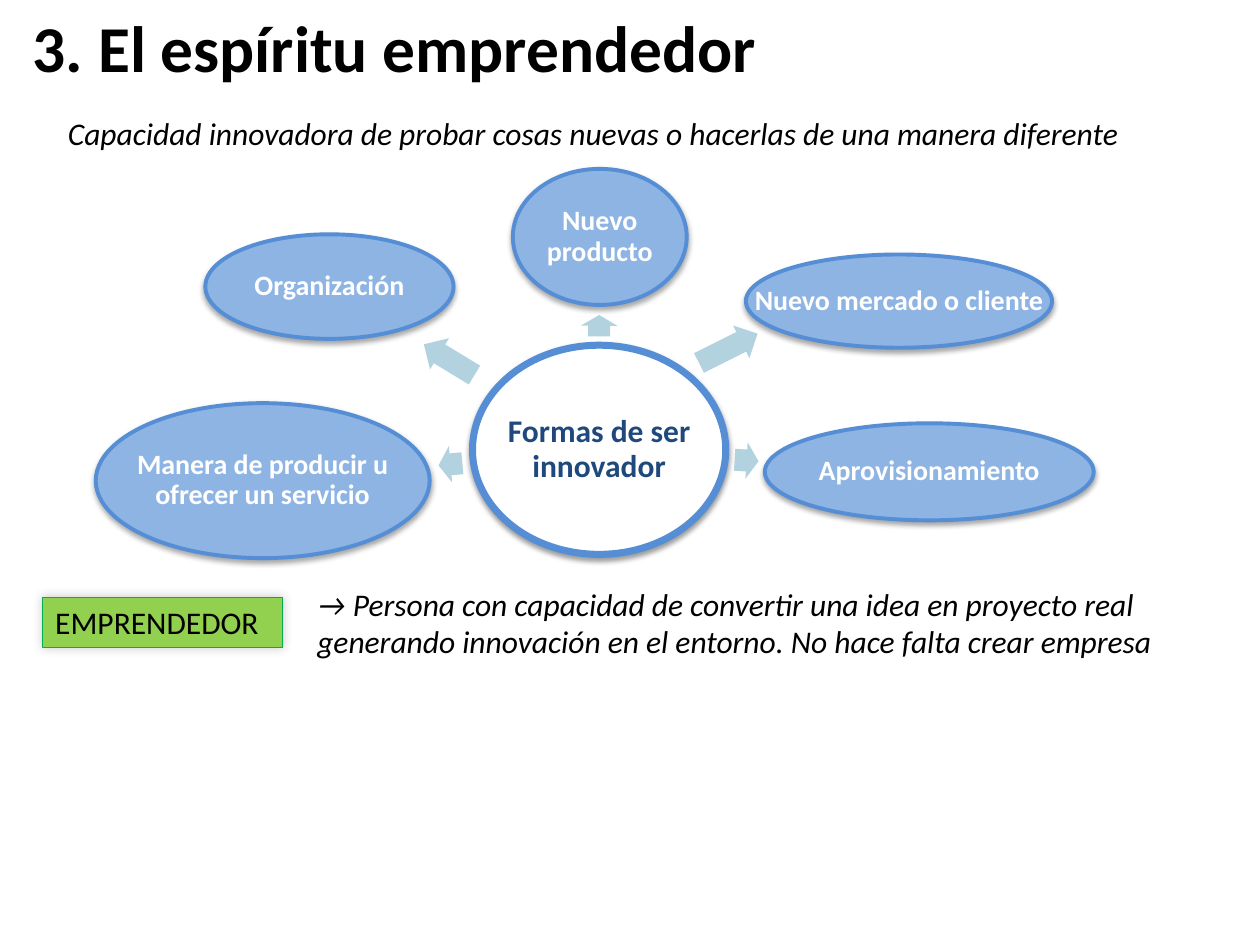
import pptx
import pptx.util
import pptx.dml.color
import pptx.enum.shapes
import pptx.enum.text
import lxml.etree
from dataclasses import dataclass
from pptx.util import Inches


@dataclass(frozen=True)
class Theme:
    font: str = "Calibri"
    text: str = "000000"
    paper: str = "FFFFFF"
    outline: str = "558ED5"
    idea: str = "8EB4E3"
    core_text: str = "1F497D"
    arrow: str = "B2D2DF"
    tag: str = "92D050"
    tag_outline: str = "00B050"
    title_size: float = 37.4
    body_size: float = 18
    idea_size: float = 16


theme = Theme()
rgb = pptx.dml.color.RGBColor.from_string
kinds = pptx.enum.shapes.MSO_SHAPE
align = pptx.enum.text.PP_ALIGN
middle = pptx.enum.text.MSO_ANCHOR.MIDDLE
fit_text = pptx.enum.text.MSO_AUTO_SIZE.SHAPE_TO_FIT_TEXT


def write(holder, words, size, color, bold=False, italic=False, alignment=align.LEFT):
    frame = holder.text_frame
    frame.word_wrap = True
    frame.text = words
    paragraph = frame.paragraphs[0]
    paragraph.alignment = alignment
    paragraph.font.name = theme.font
    paragraph.font.size = pptx.util.Pt(size)
    paragraph.font.color.rgb = rgb(color)
    paragraph.font.bold = bold
    paragraph.font.italic = italic
    return frame


def draw(shapes, kind, box, fill, outline=None, weight=0, shadow=None):
    shape = shapes.add_shape(kind, *map(Inches, box))
    shape.shadow.inherit = False
    shape.fill.solid()
    shape.fill.fore_color.rgb = rgb(fill)
    if outline:
        shape.line.color.rgb = rgb(outline)
        shape.line.width = pptx.util.Pt(weight)
    else:
        shape.line.fill.background()
    if shadow:
        opacity, blur, distance, angle = shadow
        ns = "{http://schemas.openxmlformats.org/drawingml/2006/main}"
        effects = shape.element.spPr.find(ns + "effectLst")
        outer = lxml.etree.SubElement(
            effects, ns + "outerShdw", blurRad=str(pptx.util.Pt(blur)),
            dist=str(pptx.util.Pt(distance)), dir=str(angle * 60000), rotWithShape="0")
        black = lxml.etree.SubElement(outer, ns + "srgbClr", val="000000")
        lxml.etree.SubElement(black, ns + "alpha", val=str(opacity * 1000))
    return shape


deck = pptx.Presentation()
deck.slide_width, deck.slide_height = Inches(10), Inches(7.5)
slide = deck.slides.add_slide(deck.slide_layouts[5])

title = slide.shapes.title
title.left, title.top, title.width, title.height = map(Inches, (0.16, 0.05, 9, 0.63))
write(title, "3. El espíritu emprendedor", theme.title_size, theme.text,
      bold=True).vertical_anchor = middle

definitions = [
    ((0.44, 0.86, 8.91, 0.4),
     "Capacidad innovadora de probar cosas nuevas o hacerlas de una manera diferente"),
    ((2.42, 4.59, 7.25, 0.71),
     "→ Persona con capacidad de convertir una idea en proyecto real generando "
     "innovación en el entorno. No hace falta crear empresa"),
]
for box, words in definitions:
    definition = slide.shapes.add_textbox(*map(Inches, box))
    write(definition, words, theme.body_size, theme.text, italic=True).auto_size = fit_text

entrepreneur = draw(slide.shapes, kinds.RECTANGLE, (0.34, 4.74, 1.9, 0.4),
                    theme.tag, theme.tag_outline, 0.75, (20, 6, 0, 225))
entrepreneur_text = write(entrepreneur, "EMPRENDEDOR", theme.body_size, theme.text)
entrepreneur_text.vertical_anchor = pptx.enum.text.MSO_ANCHOR.TOP
entrepreneur_text.auto_size = fit_text

diagram = slide.shapes.add_group_shape().shapes

arrows = [
    ((4.67, 2.44, 0.17, 0.29), 270.3),
    ((5.52, 2.62, 0.52, 0.29), 333.4),
    ((5.83, 3.51, 0.19, 0.29), 3.6),
    ((3.48, 3.54, 0.19, 0.29), 174.9),
    ((3.33, 2.71, 0.47, 0.29), 211.3),
]
for box, angle in arrows:
    arrow = draw(diagram, kinds.RIGHT_ARROW, box, theme.arrow)
    arrow.rotation = angle
    arrow.adjustments[0] = 0.6
    arrow.adjustments[1] = 0.5

core_style = (theme.paper, 4, (38, 3.1, 1.6, 90), theme.body_size, theme.core_text, 0.03)
idea_style = (theme.idea, 2.25, (35, 3.1, 1.8, 90), theme.idea_size, theme.paper, 0.02)
ideas = [
    ("Formas de ser innovador", (3.75, 2.74, 2.01, 1.66), core_style),
    ("Nuevo producto", (4.07, 1.34, 1.38, 1.08), idea_style),
    ("Nuevo mercado o cliente", (5.92, 2.02, 2.43, 0.74), idea_style),
    ("Aprovisionamiento", (6.07, 3.36, 2.61, 0.77), idea_style),
    ("Manera de producir u ofrecer un servicio", (0.76, 3.2, 2.65, 1.23), idea_style),
    ("Organización", (1.63, 1.86, 1.97, 0.83), idea_style),
]
for words, box, (fill, weight, shadow, size, color, inset) in ideas:
    draw(diagram, kinds.OVAL, box, fill, theme.outline, weight, shadow)
    label = diagram.add_textbox(*map(Inches, box))
    label_text = write(label, words, size, color, bold=True, alignment=align.CENTER)
    label_text.vertical_anchor = middle
    label_text.margin_left = label_text.margin_right = Inches(inset)
    label_text.margin_top = label_text.margin_bottom = Inches(inset)
    label_text.paragraphs[0].line_spacing = 0.9

deck.save("out.pptx")
